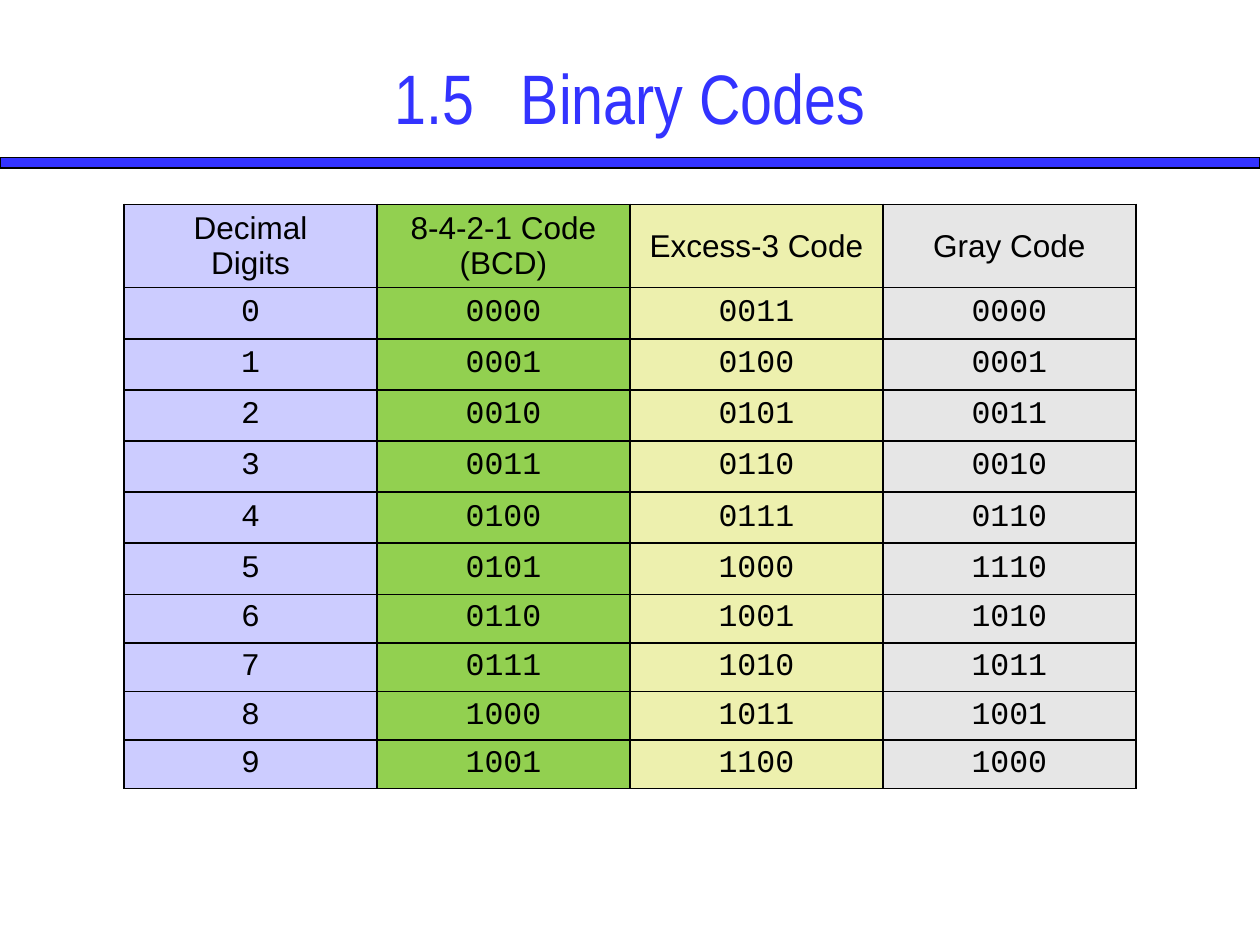
from dataclasses import dataclass

import pptx
import pptx.dml.color
import pptx.enum.shapes
import pptx.enum.text
import pptx.oxml
import pptx.oxml.ns
import pptx.util

Cm, Pt = pptx.util.Cm, pptx.util.Pt
RGB = pptx.dml.color.RGBColor.from_string
CENTER = pptx.enum.text.PP_ALIGN.CENTER
MIDDLE = pptx.enum.text.MSO_ANCHOR.MIDDLE


@dataclass
class Theme:
    accent: str = "3333FF"
    ink: str = "000000"
    columns: tuple = ("CCCCFF", "92D050", "EDF0AE", "E6E6E6")
    title_font: str = "Arial Narrow"
    head_font: str = "Arial"
    code_font: str = "Courier New"
    title_size: int = 40
    cell_size: int = 18
    border: int = 1


theme = Theme()


def add_text(p, text, font, size, color):
    p.alignment = CENTER
    r = p.add_run()
    r.text = text
    r.font.name = font
    r.font.size = Pt(size)
    r.font.color.rgb = RGB(color)


def add_borders(cell):
    """Draw all four edges; the line elements must come before the fill."""
    tcPr = cell._tc.get_or_add_tcPr()
    for i, edge in enumerate(("lnL", "lnR", "lnT", "lnB")):
        tcPr.insert(i, pptx.oxml.parse_xml(
            f'<a:{edge} {pptx.oxml.ns.nsdecls("a")} w="{Pt(theme.border)}">'
            f'<a:solidFill><a:srgbClr val="{theme.ink}"/></a:solidFill></a:{edge}>'))


prs = pptx.Presentation()
prs.slide_width, prs.slide_height = Cm(25.4), Cm(19.05)
s = prs.slides.add_slide(prs.slide_layouts[5])

# Rule under the title
rule = s.shapes.add_shape(pptx.enum.shapes.MSO_SHAPE.RECTANGLE,
                          0, Cm(3.18), prs.slide_width, Cm(0.21))
rule.shadow.inherit = False
rule.fill.solid()
rule.fill.fore_color.rgb = RGB(theme.accent)
rule.line.color.rgb = RGB(theme.ink)
rule.line.width = Pt(0.75)

# Title
title = s.shapes.title
title.left, title.top, title.width, title.height = Cm(1.27), Cm(0.76), Cm(22.86), Cm(2.36)
tf = title.text_frame
tf.vertical_anchor = MIDDLE
add_text(tf.paragraphs[0], "1.5\tBinary Codes",
         theme.title_font, theme.title_size, theme.accent)

# Code table
gray = ("0000", "0001", "0011", "0010", "0110", "1110", "1010", "1011", "1001", "1000")
rows = [("Decimal\nDigits", "8-4-2-1 Code (BCD)", "Excess-3 Code", "Gray Code")]
rows += [(str(n), f"{n:04b}", f"{n + 3:04b}", code) for n, code in enumerate(gray)]
heights = [1.68] + [1.03] * 6 + [0.98] * 4

frame = s.shapes.add_table(len(rows), len(theme.columns),
                           Cm(2.5), Cm(4.12), Cm(20.4), Cm(sum(heights)))
table = frame.table
table.first_row = table.horz_banding = False
for column in table.columns:
    column.width = Cm(5.1)

for i, (texts, height) in enumerate(zip(rows, heights)):
    table.rows[i].height = Cm(height)
    font = theme.code_font if i else theme.head_font
    for j, (text, color) in enumerate(zip(texts, theme.columns)):
        cell = table.cell(i, j)
        cell.vertical_anchor = MIDDLE
        cell.fill.solid()
        cell.fill.fore_color.rgb = RGB(color)
        add_borders(cell)
        tf = cell.text_frame
        for k, line in enumerate(text.split("\n")):
            p = tf.add_paragraph() if k else tf.paragraphs[0]
            add_text(p, line, font, theme.cell_size, theme.ink)

prs.save("out.pptx")
